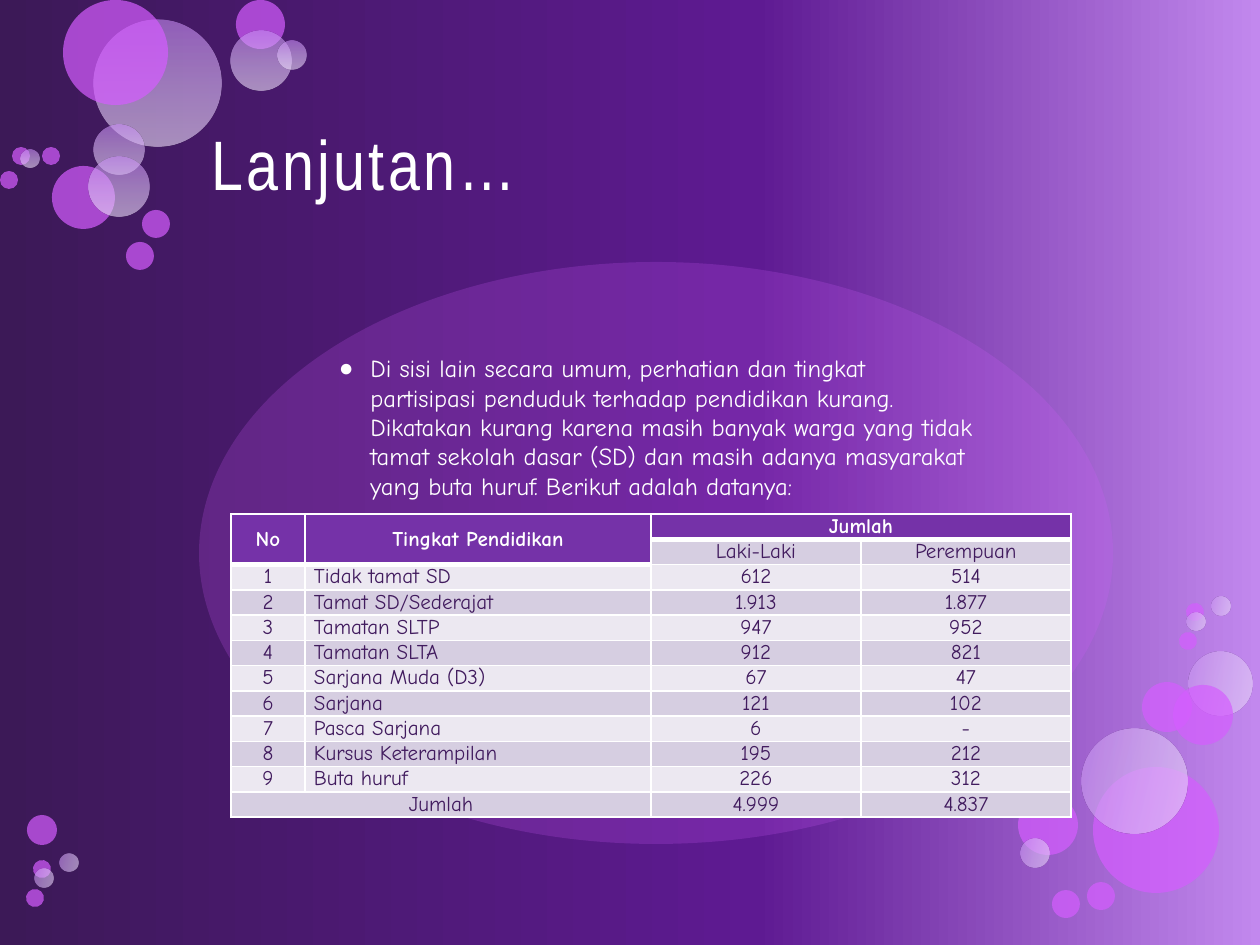
from lxml import etree
from pptx import Presentation
from pptx import util as u
from pptx.dml.color import RGBColor
from pptx.enum import shapes, text
from pptx.oxml import ns

SCALE = 914400 / 126
WHITE = RGBColor(0xFF, 0xFF, 0xFF)
PINK = RGBColor(0xD5, 0x5D, 0xFF)
PURPLE = RGBColor(0x75, 0x32, 0xA8)
INK = RGBColor(0x41, 0x1B, 0x5E)
BANDS = RGBColor(0xEC, 0xE8, 0xF1), RGBColor(0xD6, 0xCE, 0xE1)
NIGHT = RGBColor(0x3C, 0x19, 0x57)
VIOLET = RGBColor(0x5E, 0x1A, 0x92)
LILAC = RGBColor(0xC2, 0x88, 0xEE)
BACKDROP = [(0, NIGHT), (60, VIOLET), (100, LILAC)]
MIST = [(0, RGBColor(0xC6, 0x8C, 0xF2)), (50, RGBColor(0xDA, 0xBA, 0xF5)),
        (100, RGBColor(0xEC, 0xDE, 0xF9))]

LEFT_BUBBLES = [
    (94, 20, 127, "mist"), (52, 166, 63, "pink"), (94, 125, 50, "mist"),
    (89, 157, 60, "mist"), (63, 0, 105, "pink"), (236, 0, 49, "pink"),
    (231, 31, 60, "mist"), (278, 41, 28, "mist"), (142, 210, 28, "pink"),
    (12, 147, 18, "pink"), (126, 242, 28, "pink"), (0, 171, 18, "pink"),
    (21, 150, 18, "mist"), (42, 147, 18, "pink"),
]
TURNED_BUBBLES = [
    (1093, 767, 126, "pink"), (1189, 652, 63, "mist"), (1142, 682, 50, "pink"),
    (1173, 685, 60, "pink"), (1082, 729, 105, "mist"), (27, 815, 30, "pink"),
    (1018, 795, 60, "pink"), (1021, 839, 28, "mist"), (1052, 890, 28, "pink"),
    (1186, 603, 18, "pink"), (1087, 882, 28, "pink"), (1212, 597, 18, "mist"),
    (1187, 613, 18, "mist"), (1179, 632, 18, "pink"), (33, 860, 18, "pink"),
    (60, 854, 18, "mist"), (35, 869, 18, "mist"), (26, 889, 18, "pink"),
]
BODY = ("Di sisi lain secara umum, perhatian dan tingkat partisipasi penduduk terhadap "
        "pendidikan kurang. Dikatakan kurang karena masih banyak warga yang tidak tamat "
        "sekolah dasar (SD) dan masih adanya masyarakat yang buta huruf. "
        "Berikut adalah datanya:")
COLUMNS = [74, 346, 210, 210]
ROWS = [
    ("No", "Tingkat Pendidikan", "Jumlah", ""),
    ("", "", "Laki-Laki", "Perempuan"),
    ("1", "Tidak tamat SD", "612", "514"),
    ("2", "Tamat SD/Sederajat", "1.913", "1.877"),
    ("3", "Tamatan SLTP", "947", "952"),
    ("4", "Tamatan SLTA", "912", "821"),
    ("5", "Sarjana Muda (D3)", "67", "47"),
    ("6", "Sarjana", "121", "102"),
    ("7", "Pasca Sarjana", "6", "-"),
    ("8", "Kursus Keterampilan", "195", "212"),
    ("9", "Buta huruf", "226", "312"),
    ("Jumlah", "", "4.999", "4.837"),
]
MERGES = [(0, 0, 1, 0), (0, 1, 1, 1), (0, 2, 0, 3), (11, 0, 11, 1)]


def px(*lengths):
    """Turn pixel lengths into a list of EMU."""
    return [u.Emu(round(length * SCALE)) for length in lengths]


def child(parent, tag, **attributes):
    """Append a DrawingML element with attributes."""
    element = etree.SubElement(parent, ns.qn(tag))
    for name, value in attributes.items():
        element.set(name, str(value))
    return element


def assign(target, values):
    """Set each attribute named in a dict."""
    for name, value in values.items():
        setattr(target, name, value)


def paint_gradient(fill, parent, stops, angle, opacity=100):
    """Give a shape or background a linear gradient."""
    fill.background()
    gradient = etree.Element(ns.qn("a:gradFill"), rotWithShape="1")
    stop_list = child(gradient, "a:gsLst")
    for position, color in stops:
        stop = child(stop_list, "a:gs", pos=position * 1000)
        tint = child(stop, "a:srgbClr", val=color)
        if opacity < 100:
            child(tint, "a:alpha", val=opacity * 1000)
    child(gradient, "a:lin", ang=angle * 60000, scaled=0)
    parent.replace(parent.find(ns.qn("a:noFill")), gradient)


def add_ellipse(slide, box, opacity):
    """Add a translucent pink ellipse without outline."""
    shape = slide.shapes.add_shape(shapes.MSO_SHAPE.OVAL, *px(*box))
    shape.shadow.inherit = False
    shape.line.fill.background()
    shape.fill.solid()
    shape.fill.fore_color.rgb = PINK
    tint = shape.element.spPr.find(".//" + ns.qn("a:srgbClr"))
    child(tint, "a:alpha", val=opacity * 1000)
    return shape


def add_bubbles(slide, bubbles, turned):
    """Add a group of round pink and misty bubbles."""
    for left, top, size, kind in bubbles:
        shape = add_ellipse(slide, (left, top, size, size), 70)
        if kind == "mist":
            paint_gradient(shape.fill, shape.element.spPr, MIST, 90, 60)
        if turned:
            shape.rotation = 103.3
            shape.element.spPr.find(ns.qn("a:xfrm")).set("flipV", "1")


def write(frame, content, alignment, font, color):
    """Write one formatted paragraph into a text frame."""
    paragraph = frame.paragraphs[0]
    paragraph.alignment = alignment
    run = paragraph.add_run()
    run.text = content
    assign(run.font, font)
    run.font.color.rgb = color
    return paragraph


def add_title(slide):
    """Add the widely spaced slide title."""
    frame = slide.shapes.add_textbox(*px(199, 84, 914, 158)).text_frame
    assign(frame, {"word_wrap": True, "vertical_anchor": text.MSO_ANCHOR.MIDDLE})
    paragraph = write(frame, "Lanjutan…", text.PP_ALIGN.LEFT,
                      {"name": "Arial Narrow", "size": u.Pt(40)}, WHITE)
    paragraph.runs[0].font._element.set("spc", "200")


def add_body(slide):
    """Add the bulleted statement inside the large ellipse."""
    frame = add_ellipse(slide, (199, 262, 914, 582), 20).text_frame
    margin = px(6)[0]
    assign(frame, {"word_wrap": True, "vertical_anchor": text.MSO_ANCHOR.TOP,
                   "margin_left": margin, "margin_right": margin,
                   "margin_top": margin, "margin_bottom": margin})
    paragraph = write(frame, BODY, text.PP_ALIGN.LEFT,
                      {"name": "Comic Neue", "size": u.Pt(14)}, WHITE)
    paragraph.space_before = u.Pt(18)
    properties = paragraph._p.get_or_add_pPr()
    properties.set("marL", "228600")
    properties.set("indent", "-228600")
    child(properties, "a:buFont", typeface="Arial")
    child(properties, "a:buChar", char="●")


def draw_borders(cell, bottom):
    """Draw white cell borders with a given bottom width in points."""
    properties = cell._tc.get_or_add_tcPr()
    for side, width in zip("LRTB", (1, 1, 1, bottom)):
        line = child(properties, "a:ln" + side, w=u.Pt(width))
        child(child(line, "a:solidFill"), "a:srgbClr", val=WHITE)


def format_cell(cell, content, row, column):
    """Fill, frame and label one table cell."""
    header = row == 0 or (row == 1 and column < 2)
    draw_borders(cell, 3 if header else 1)
    cell.fill.solid()
    cell.fill.fore_color.rgb = PURPLE if header else BANDS[row % 2]
    side = px(9)[0]
    assign(cell, {"margin_left": side, "margin_right": side, "margin_top": 0,
                  "margin_bottom": 0, "vertical_anchor": text.MSO_ANCHOR.MIDDLE})
    names = column == 1 and row > 1
    if content:
        write(cell.text_frame, content,
              text.PP_ALIGN.JUSTIFY if names else text.PP_ALIGN.CENTER,
              {"name": "Comic Neue", "size": u.Pt(12), "bold": header},
              WHITE if header else INK)
    else:
        cell.text_frame.paragraphs[0].font.size = u.Pt(12)


def add_education_table(slide):
    """Add the table of residents by level of education."""
    frame = slide.shapes.add_table(len(ROWS), len(COLUMNS),
                                   *px(231, 514, sum(COLUMNS), 24 * len(ROWS)))
    table = frame.table
    for column, width in zip(table.columns, px(*COLUMNS)):
        column.width = width
    for row, values in enumerate(ROWS):
        for column, content in enumerate(values):
            format_cell(table.cell(row, column), content, row, column)
    for top, left, bottom, right in MERGES:
        table.cell(top, left).merge(table.cell(bottom, right))


def main():
    """Build and save the slide."""
    presentation = Presentation()
    presentation.slide_width, presentation.slide_height = px(1260, 945)
    slide = presentation.slides.add_slide(presentation.slide_layouts[6])
    fill = slide.background.fill
    fill.background()
    paint_gradient(fill, slide.element.find(".//" + ns.qn("p:bgPr")), BACKDROP, 0)
    add_bubbles(slide, LEFT_BUBBLES, False)
    add_bubbles(slide, TURNED_BUBBLES, True)
    add_title(slide)
    add_body(slide)
    add_education_table(slide)
    presentation.save("out.pptx")


if __name__ == "__main__":
    main()
